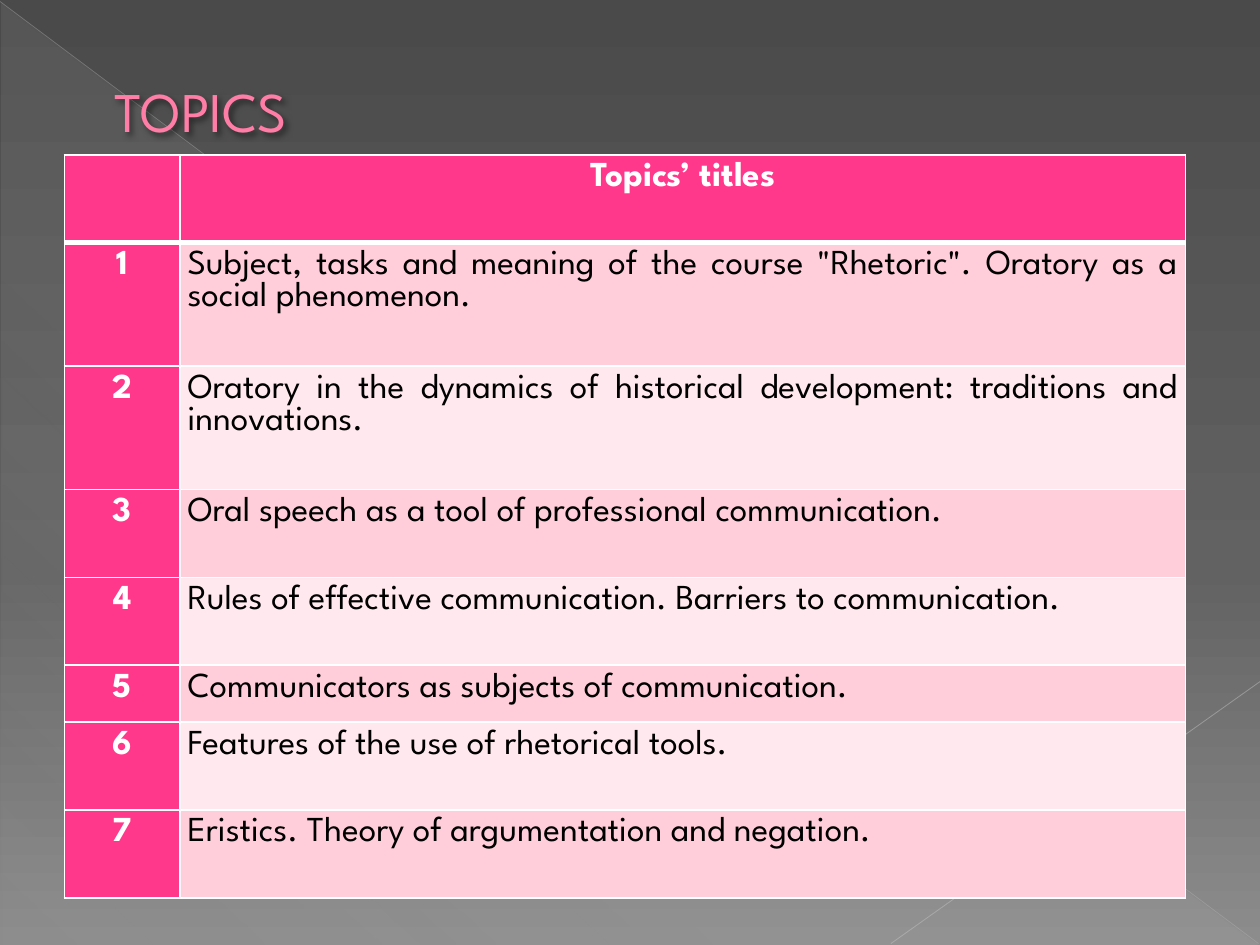
from lxml import etree
from pptx import Presentation
from pptx import util as u
from pptx.dml.color import RGBColor
from pptx.enum import shapes, text
from pptx.oxml import ns

HUES = {"pink": "FF388C", "rose": "FFCEDA", "blush": "FFE8EE", "title": "FF7DA7",
        "edge": "B12761", "white": "FFFFFF", "black": "000000", "veil": "D2D2D2",
        "long": "BFBFBF", "short": "C6C6C6", "dark": "4A4A4A", "mid": "626262",
        "light": "8C8C8C"}
FONT = "League Spartan"
TOPICS = [
    'Subject, tasks and meaning of the course "Rhetoric". Oratory as a social phenomenon.',
    "Oratory in the dynamics of historical development: traditions and innovations.",
    "Oral speech as a tool of professional communication.",
    "Rules of effective communication. Barriers to communication.",
    "Communicators as subjects of communication.",
    "Features of the use of rhetorical tools.",
    "Eristics. Theory of argumentation and negation.",
]


def node(tag, kids="", **attrs):
    """Return the markup of one DrawingML element."""
    pairs = "".join(f' {key}="{val}"' for key, val in attrs.items())
    return f'<a:{tag} xmlns:a="{ns.nsuri("a")}"{pairs}>{kids}</a:{tag}>'


def paint(hue, alpha=100):
    return node("srgbClr", node("alpha", val=alpha * 1000), val=HUES[hue])


deck = Presentation()
deck.slide_width, deck.slide_height = u.Cm(25.4), u.Cm(19.05)
slide = deck.slides.add_slide(deck.slide_layouts[6])

# Backdrop and veil, each a three-stop gradient
slide.background.fill.solid()
veil = slide.shapes.add_shape(shapes.MSO_SHAPE.RIGHT_TRIANGLE,
                              u.Cm(0.03), u.Cm(0.05), u.Cm(25.35), u.Cm(19))
veil.shadow.inherit = False
veil.line.fill.background()
veil.fill.solid()
back_fill = slide._element.find(f".//{ns.qn('p:bgPr')}/{ns.qn('a:solidFill')}")
veil_fill = veil._element.spPr.find(ns.qn("a:solidFill"))
for old, angle, stops in [
    (back_fill, 90, [(0, "dark", 100), (60, "mid", 100), (100, "light", 100)]),
    (veil_fill, 133, [(0, "veil", 10), (70, "veil", 8), (100, "veil", 1)]),
]:
    marks = "".join(node("gs", paint(hue, alpha), pos=pos * 1000)
                    for pos, hue, alpha in stops)
    grad = node("gradFill", node("gsLst", marks)
                + node("lin", ang=angle * 60000, scaled=0), rotWithShape=1)
    old.getparent().replace(old, etree.fromstring(grad))

# Thin slanted lines
for ends, hue, width, alpha in [
    ((0, 0.03, 25.37, 19.02), "long", 0.39, 35),
    ((25.4, 13.74, 17.96, 19.02), "short", 0.47, 45),
]:
    line = slide.shapes.add_connector(shapes.MSO_CONNECTOR.STRAIGHT, *map(u.Cm, ends))
    props = line._element.spPr
    fill = node("solidFill", paint(hue, alpha))
    props.append(etree.fromstring(node("ln", fill, w=u.Pt(width))))
    props.append(etree.fromstring(node("effectLst")))

# Title
box = slide.shapes.add_textbox(u.Cm(0.71), u.Cm(1.32), u.Cm(22.86), u.Cm(1.8))
frame = box.text_frame
frame.word_wrap = True
frame.vertical_anchor = text.MSO_ANCHOR.MIDDLE
para = frame.paragraphs[0]
para._p.get_or_add_pPr().set("marL", str(u.Cm(1.35)))
run = para.add_run()
run.text = "TOPICS"
for key, val in {"name": FONT, "size": u.Pt(32), "bold": False}.items():
    setattr(run.font, key, val)
run.font.color.rgb = RGBColor.from_string(HUES["title"])
edge = node("ln", node("solidFill", paint("edge")), w=u.Pt(0.5))
run._r.get_or_add_rPr().insert(0, etree.fromstring(edge))
shade = node("outerShdw", paint("black", 50), blurRad=u.Pt(3), dist=u.Pt(2.5),
             dir=45 * 60000, algn="tl", rotWithShape=0)
box._element.spPr.append(etree.fromstring(node("effectLst", shade)))

# Table
rows = [("", "Topics’ titles")] + [(str(n), name) for n, name in enumerate(TOPICS, 1)]
tall = [1.77, 2.49, 2.49, 1.77, 1.77, 1.07, 1.77, 1.77]
wide = [2.33, 20.27]
table = slide.shapes.add_table(len(rows), len(wide), u.Cm(1.3), u.Cm(3.12),
                               u.Cm(sum(wide)), u.Cm(sum(tall))).table
for col, width in zip(table.columns, wide):
    col.width = u.Cm(width)
for r, (row, height) in enumerate(zip(rows, tall)):
    table.rows[r].height = u.Cm(height)
    for c, words in enumerate(row):
        cell = table.cell(r, c)
        head = r == 0 or c == 0
        for side in ("left", "right", "top", "bottom"):
            setattr(cell, f"margin_{side}", u.Cm(0.15))
            thick = 3 if (r, side) in ((0, "bottom"), (1, "top")) else 1
            rule = node("ln" + side[0].upper(), node("solidFill", paint("white")),
                        w=u.Pt(thick))
            cell._tc.get_or_add_tcPr().append(etree.fromstring(rule))
        cell.fill.solid()
        hue = "pink" if head else "rose" if r % 2 else "blush"
        cell.fill.fore_color.rgb = RGBColor.from_string(HUES[hue])
        if not words:
            continue
        para = cell.text_frame.paragraphs[0]
        para.alignment = text.PP_ALIGN.CENTER if head else text.PP_ALIGN.JUSTIFY
        run = para.add_run()
        run.text = words
        for key, val in {"name": FONT, "size": u.Pt(20), "bold": head}.items():
            setattr(run.font, key, val)
        run.font.color.rgb = RGBColor.from_string(HUES["white" if head else "black"])

deck.save("out.pptx")
